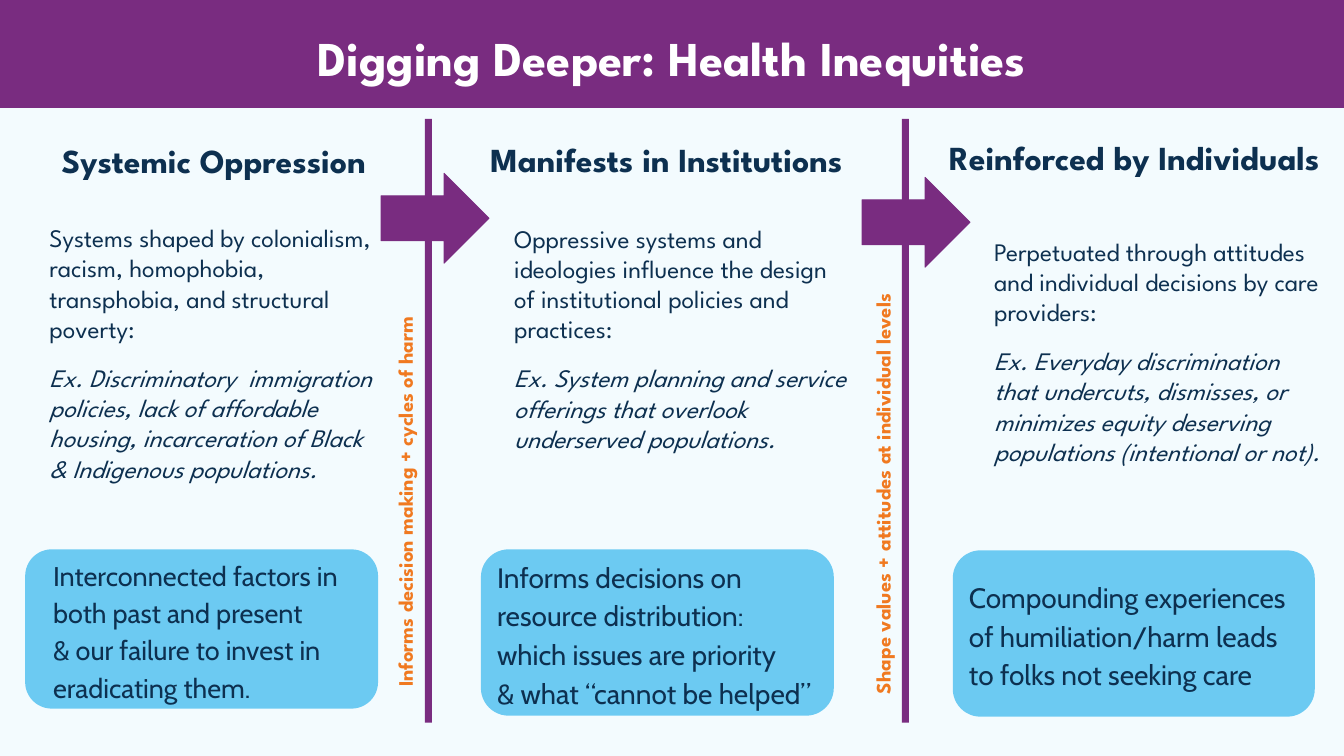
from pptx import Presentation
from pptx.dml.color import RGBColor
from pptx.enum.shapes import MSO_SHAPE
from pptx.enum.text import MSO_ANCHOR, MSO_AUTO_SIZE, PP_ALIGN
from pptx.util import Inches, Pt

PURPLE, NAVY, ORANGE = "792C80", "0D3050", "F07920"
SKY, PALE, WHITE = "6CCAF2", "F3FBFE", "FFFFFF"
HEADING_FONT, CARD_FONT = "League Spartan", "Cabin"
WIDTH, HEIGHT = 13.33, 7.5
BANNER_HEIGHT = 1.07
DIVIDER_TOP, DIVIDER_HEIGHT, DIVIDER_WIDTH = 1.18, 5.99, 0.07

# Each column starts at a divider; part boxes are left, top, width, height
# measured from the column's left edge and the bottom of the banner.
COLUMNS = [
    dict(left=0,
         heading=("Systemic Oppression", (0.3, 0.13, 3.64, 0.73)),
         body=("Systems shaped by colonialism, racism, homophobia, "
               "transphobia, and structural poverty:",
               "Ex. Discriminatory  immigration policies, lack of affordable "
               "housing, incarceration of Black & Indigenous populations.",
               (0.24, 0.49, 3.79, 3.88)),
         card=(["Interconnected factors in", "both past and present",
                "& our failure to invest in", "eradicating them."],
               19.3, 0.2, (0.25, 4.38, 3.5, 1.58))),
    dict(left=4.25,
         heading=("Manifests in Institutions", (0.28, 0.12, 4.16, 0.73)),
         body=("Oppressive systems and ideologies influence the design of "
               "institutional policies and practices:",
               "Ex. System planning and service offerings that overlook "
               "underserved populations.",
               (0.6, 0.56, 3.83, 3.45)),
         card=(["Informs decisions on resource distribution: "
                "which issues are priority", "& what “cannot be helped”"],
               20, 0.08, (0.52, 4.38, 3.5, 1.65))),
    dict(left=8.98,
         heading=("Reinforced by Individuals", (0.09, 0.1, 4.36, 0.73)),
         body=("Perpetuated through attitudes and individual decisions by "
               "care providers:",
               "Ex. Everyday discrimination that undercuts, dismisses, or "
               "minimizes equity deserving populations (intentional or not).",
               (0.63, 0.65, 3.79, 3.53)),
         card=(["Compounding experiences of humiliation/harm leads to folks "
                "not seeking care"],
               20, 0.08, (0.47, 4.39, 3.59, 1.65))),
]

# Divider position, arrow box from the divider, label, label centre, label size
TRANSITIONS = [
    (4.25, (-0.47, 0.54), "Informs decision making + cycles of harm",
     (-0.27, 3.5), (4.53, 0.44)),
    (8.98, (-0.43, 0.58), "Shape values + attitudes at individual levels",
     (-0.22, 3.55), (4.57, 0.52)),
]


def color(value):
    return RGBColor.from_string(value)


def set_frame(frame, horizontal, vertical, anchor=MSO_ANCHOR.TOP):
    frame.word_wrap = True
    frame.auto_size = MSO_AUTO_SIZE.NONE
    frame.vertical_anchor = anchor
    frame.margin_left = frame.margin_right = Inches(horizontal)
    frame.margin_top = frame.margin_bottom = Inches(vertical)


def add_run(paragraph, text, size, font=HEADING_FONT, fill=NAVY, bold=False,
            italic=False):
    run = paragraph.add_run()
    run.text = text
    run.font.name, run.font.size = font, Pt(size)
    run.font.bold, run.font.italic = bold, italic
    run.font.color.rgb = color(fill)


def add_box(slide, box):
    return slide.shapes.add_textbox(*map(Inches, box))


def add_filled(slide, kind, box, fill):
    shape = slide.shapes.add_shape(kind, *map(Inches, box))
    shape.shadow.inherit = False
    shape.fill.solid()
    shape.fill.fore_color.rgb = color(fill)
    shape.line.fill.background()
    return shape


def add_banner(slide, box):
    title = slide.shapes.title
    title.left, title.top, title.width, title.height = map(Inches, box)
    title.fill.solid()
    title.fill.fore_color.rgb = color(PURPLE)
    set_frame(title.text_frame, 0.13, 0)
    title.text_frame.margin_top = Inches(0.28)
    paragraph = title.text_frame.paragraphs[0]
    paragraph.alignment = PP_ALIGN.CENTER
    add_run(paragraph, "Digging Deeper: Health Inequities", 34.7, fill=WHITE,
            bold=True)


def add_column(slide, left, top, heading, body, card):
    def place(box):
        return (left + box[0], top + box[1], *box[2:])

    # Heading
    text, box = heading
    frame = add_box(slide, place(box)).text_frame
    set_frame(frame, 0.13, 0.13)
    paragraph = frame.paragraphs[0]
    paragraph.alignment = PP_ALIGN.CENTER
    paragraph.line_spacing = 1.15
    add_run(paragraph, text, 24, bold=True)

    # Explanation and example
    explanation, example, box = body
    frame = add_box(slide, place(box)).text_frame
    set_frame(frame, 0.25, 0.25, MSO_ANCHOR.MIDDLE)
    add_run(frame.paragraphs[0], explanation, 18)
    paragraph = frame.add_paragraph()
    paragraph.space_before = Pt(13.3)
    add_run(paragraph, example, 18, italic=True)

    # Consequence card
    lines, size, inset, box = card
    shape = add_filled(slide, MSO_SHAPE.ROUNDED_RECTANGLE, place(box), SKY)
    frame = shape.text_frame
    set_frame(frame, 0.08, 0.08, MSO_ANCHOR.MIDDLE)
    frame.margin_left = Inches(inset)
    paragraph = frame.paragraphs[0]
    paragraph.alignment = PP_ALIGN.LEFT
    paragraph.line_spacing = 1.15
    for index, line in enumerate(lines):
        if index:
            paragraph.add_line_break()
        add_run(paragraph, line, size, CARD_FONT)


def add_transition(slide, left, top, arrow_offset, text, center, size):
    # Divider
    add_filled(slide, MSO_SHAPE.RECTANGLE,
               (left - DIVIDER_WIDTH / 2, DIVIDER_TOP, DIVIDER_WIDTH,
                DIVIDER_HEIGHT), PURPLE)

    # Arrow
    arrow = add_filled(slide, MSO_SHAPE.RIGHT_ARROW,
                       (left + arrow_offset[0], top + arrow_offset[1] + 0.11,
                        1.07, 0.89), PURPLE)
    arrow.line.color.rgb = color(PURPLE)
    arrow.line.width = Pt(0.75)

    # Upward label
    width, height = size
    label = add_box(slide, (left + center[0] - width / 2,
                            DIVIDER_TOP + center[1] - height / 2,
                            width, height))
    label.rotation = 270
    set_frame(label.text_frame, 0.13, 0.13)
    add_run(label.text_frame.paragraphs[0], text, 14.7, fill=ORANGE, bold=True)


def main():
    presentation = Presentation()
    presentation.slide_width = Inches(WIDTH)
    presentation.slide_height = Inches(HEIGHT)
    slide = presentation.slides.add_slide(presentation.slide_layouts[5])
    slide.background.fill.solid()
    slide.background.fill.fore_color.rgb = color(PALE)

    add_banner(slide, (0, 0, WIDTH, BANNER_HEIGHT))
    for column in COLUMNS:
        add_column(slide, top=BANNER_HEIGHT, **column)
    for left, *parts in TRANSITIONS:
        add_transition(slide, left, BANNER_HEIGHT, *parts)
    presentation.save("out.pptx")


if __name__ == "__main__":
    main()
